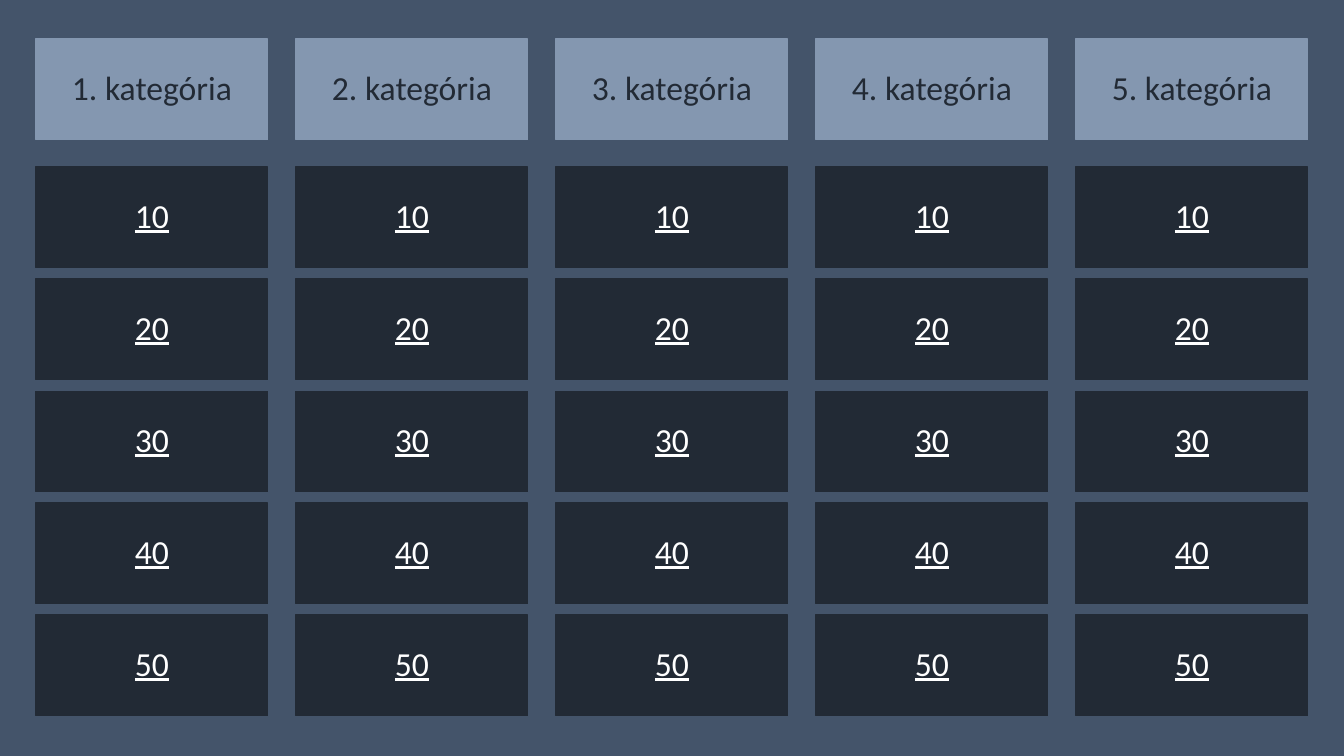
from pptx import Presentation
from pptx.dml.color import RGBColor
from pptx.enum.shapes import MSO_SHAPE
from pptx.enum.text import MSO_ANCHOR, PP_ALIGN
from pptx.util import Emu, Pt

CATEGORIES = ["1. kategória", "2. kategória", "3. kategória", "4. kategória", "5. kategória"]
POINTS = ["10", "20", "30", "40", "50"]

RECTANGLE = MSO_SHAPE.RECTANGLE
MIDDLE = MSO_ANCHOR.MIDDLE
CENTER = PP_ALIGN.CENTER

SLATE = RGBColor(0x44, 0x54, 0x6A)
LIGHT_SLATE = RGBColor(0x84, 0x97, 0xB0)
NAVY = RGBColor(0x22, 0x2A, 0x35)
WHITE = RGBColor(0xFF, 0xFF, 0xFF)

FONT = "Calibri"
FONT_SIZE = Pt(24)

# Lengths in px
SLIDE_WIDTH, SLIDE_HEIGHT = 1344, 756
EMU_PER_PX = 12192000 / SLIDE_WIDTH
LEFT, COLUMN_STEP = 36, 260
HEADER_TOP, POINTS_TOP, ROW_STEP = 39, 167, 112
CELL_WIDTH, CELL_HEIGHT = 232, 101


def px(length):
    return Emu(round(length * EMU_PER_PX))


def add_cell(slide, left, top, text, fill_color, text_color, underline=False):
    box = slide.shapes.add_shape(RECTANGLE, px(left), px(top), px(CELL_WIDTH), px(CELL_HEIGHT))
    box.shadow.inherit = False
    box.fill.solid()
    box.fill.fore_color.rgb = fill_color
    box.line.color.rgb = fill_color
    box.line.width = Pt(0.75)
    frame = box.text_frame
    frame.word_wrap = True
    frame.vertical_anchor = MIDDLE
    para = frame.paragraphs[0]
    para.alignment = CENTER
    para.line_spacing = 0.9
    run = para.add_run()
    run.text = text
    run.font.name = FONT
    run.font.size = FONT_SIZE
    run.font.color.rgb = text_color
    run.font.underline = underline


def main():
    deck = Presentation()
    deck.slide_width, deck.slide_height = px(SLIDE_WIDTH), px(SLIDE_HEIGHT)
    slide = deck.slides.add_slide(deck.slide_layouts[6])
    slide.background.fill.solid()
    slide.background.fill.fore_color.rgb = SLATE

    for column, category in enumerate(CATEGORIES):
        left = LEFT + column * COLUMN_STEP
        add_cell(slide, left, HEADER_TOP, category, LIGHT_SLATE, NAVY)
        for row, value in enumerate(POINTS):
            add_cell(slide, left, POINTS_TOP + row * ROW_STEP, value, NAVY, WHITE, underline=True)

    deck.save("out.pptx")


if __name__ == "__main__":
    main()
